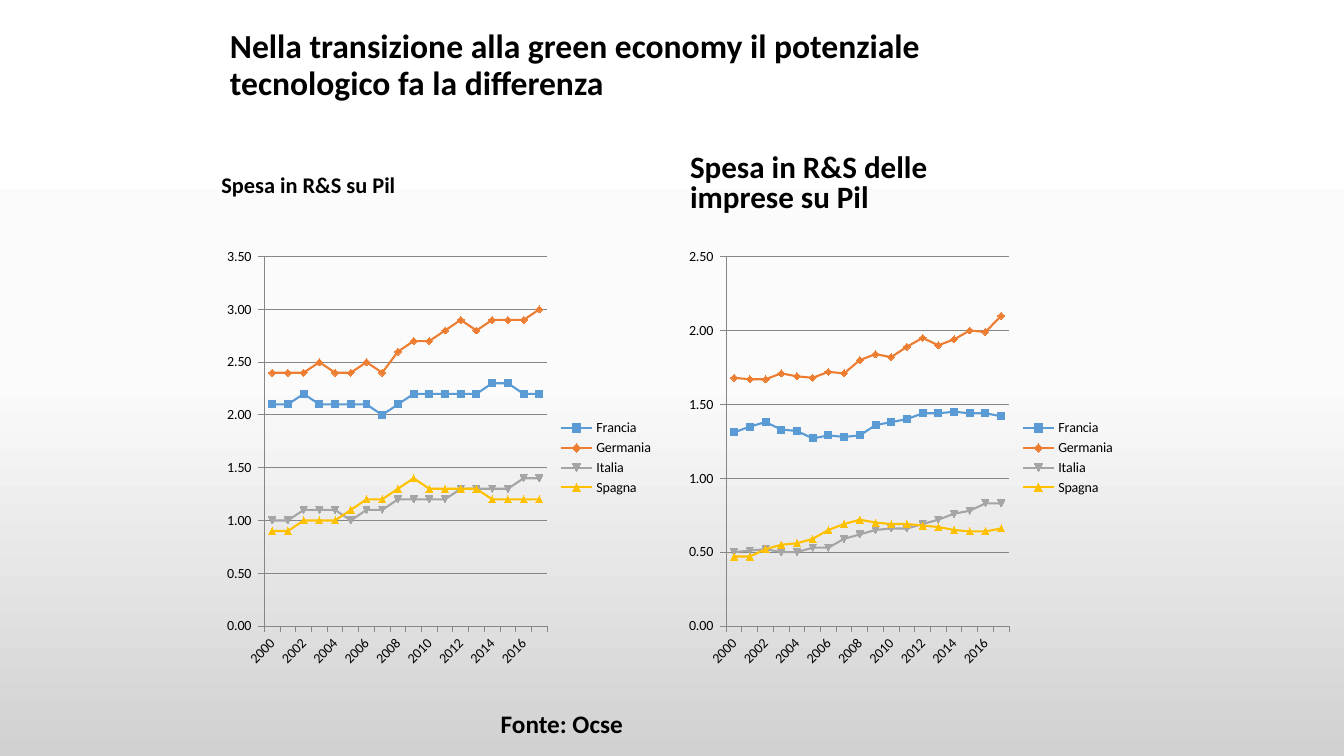
from copy import deepcopy

from pptx import Presentation
from pptx.chart.data import CategoryChartData
from pptx.dml.color import RGBColor
from pptx.enum.chart import XL_CHART_TYPE as CT, XL_LEGEND_POSITION as LP, XL_TICK_MARK as TM
from pptx.enum.text import MSO_ANCHOR as MA, PP_ALIGN as PA
from pptx.oxml import parse_xml
from pptx.oxml.ns import nsdecls
from pptx.util import Cm, Pt

FONT = "Calibri"
BLACK = RGBColor(0x00, 0x00, 0x00)
GREY = RGBColor(0x86, 0x86, 0x86)
BACKDROP = [(0, RGBColor(0xFF, 0xFF, 0xFF)), (0.5, RGBColor(0xFB, 0xFB, 0xFB)),
            (1, RGBColor(0xD1, 0xD1, 0xD1))]
COUNTRY_COLORS = {
    "Francia": RGBColor(0x5B, 0x9B, 0xD5),
    "Germania": RGBColor(0xED, 0x7D, 0x31),
    "Italia": RGBColor(0xA5, 0xA5, 0xA5),
    "Spagna": RGBColor(0xFF, 0xC0, 0x00),
}
YEARS = [str(year) for year in range(2000, 2018)]
TOTAL_SPENDING = {
    "Francia": [2.1, 2.1, 2.2, 2.1, 2.1, 2.1, 2.1, 2, 2.1,
                2.2, 2.2, 2.2, 2.2, 2.2, 2.3, 2.3, 2.2, 2.2],
    "Germania": [2.4, 2.4, 2.4, 2.5, 2.4, 2.4, 2.5, 2.4, 2.6,
                 2.7, 2.7, 2.8, 2.9, 2.8, 2.9, 2.9, 2.9, 3],
    "Italia": [1, 1, 1.1, 1.1, 1.1, 1, 1.1, 1.1, 1.2,
               1.2, 1.2, 1.2, 1.3, 1.3, 1.3, 1.3, 1.4, 1.4],
    "Spagna": [0.9, 0.9, 1, 1, 1, 1.1, 1.2, 1.2, 1.3,
               1.4, 1.3, 1.3, 1.3, 1.3, 1.2, 1.2, 1.2, 1.2],
}
BUSINESS_SPENDING = {
    "Francia": [1.31, 1.35, 1.38, 1.33, 1.32, 1.27, 1.29, 1.28, 1.29,
                1.36, 1.38, 1.4, 1.44, 1.44, 1.45, 1.44, 1.44, 1.42],
    "Germania": [1.68, 1.67, 1.67, 1.71, 1.69, 1.68, 1.72, 1.71, 1.8,
                 1.84, 1.82, 1.89, 1.95, 1.9, 1.94, 2, 1.99, 2.1],
    "Italia": [0.5, 0.51, 0.52, 0.5, 0.5, 0.53, 0.53, 0.59, 0.62,
               0.65, 0.66, 0.66, 0.69, 0.72, 0.76, 0.78, 0.83, 0.83],
    "Spagna": [0.47, 0.47, 0.52, 0.55, 0.56, 0.59, 0.65, 0.69, 0.72,
               0.7, 0.69, 0.69, 0.68, 0.67, 0.65, 0.64, 0.64, 0.66],
}


def write(sp, text, size, anchor=MA.TOP, spacing=1.0, bottom=0.13):
    """Fill a shape with one bold, left-aligned paragraph."""
    tf = sp.text_frame
    tf.word_wrap = True
    tf.vertical_anchor = anchor
    tf.margin_bottom = Cm(bottom)
    p = tf.paragraphs[0]
    p.alignment = PA.LEFT
    p.line_spacing = spacing
    r = p.add_run()
    r.text = text
    r.font.name, r.font.size, r.font.bold = FONT, Pt(size), True
    r.font.color.rgb = BLACK


def add_label(s, box, text, size, **kwargs):
    """Add a text box in the given box."""
    write(s.shapes.add_textbox(*map(Cm, box)), text, size, **kwargs)


def set_title(s, box, text):
    """Move the title placeholder to the box and fill it."""
    sp = s.shapes.title
    sp.left, sp.top, sp.width, sp.height = map(Cm, box)
    write(sp, text, 24, anchor=MA.MIDDLE, spacing=0.9)


def set_background(s):
    """Paint the top-to-bottom gradient."""
    fill = s.background.fill
    fill.gradient()
    fill.gradient_angle = 270
    stops = s.background._cSld.bg.bgPr.find(".//{*}gsLst")
    stops.insert(1, deepcopy(stops[0]))
    for stop, (position, color) in zip(fill.gradient_stops, BACKDROP):
        stop.position = position
        stop.color.rgb = color


def style_axis(axis):
    """Give an axis its grey line and outside ticks."""
    axis.format.line.color.rgb = GREY
    axis.format.line.width = Pt(0.75)
    axis.major_tick_mark = TM.OUTSIDE
    axis.minor_tick_mark = TM.NONE


def add_spending_chart(s, box, spending, top, step=0.5):
    """Add a line chart of spending by country in the given box."""
    data = CategoryChartData()
    data.categories = YEARS
    for country, values in spending.items():
        data.add_series(country, values)
    chart = s.shapes.add_chart(CT.LINE_MARKERS, *map(Cm, box), data).chart
    chart.has_title = False
    chart.font.name, chart.font.size = FONT, Pt(10)
    chart.font.color.rgb = BLACK
    chart.has_legend = True
    chart.legend.position = LP.RIGHT
    chart.legend.include_in_layout = False

    years, values = chart.category_axis, chart.value_axis
    style_axis(years)
    style_axis(values)
    years.tick_labels.font.size = Pt(10)
    years._element.txPr.bodyPr.set("rot", "-2700000")
    skip = parse_xml(f'<c:tickLblSkip {nsdecls("c")} val="2"/>')
    years._element.find("{*}noMultiLvlLbl").addprevious(skip)
    values.minimum_scale, values.maximum_scale, values.major_unit = 0, top, step
    values.tick_labels.number_format = r"#,##0.00_ ;\-#,##0.00\ "
    values.tick_labels.number_format_is_linked = False
    values.has_major_gridlines = True
    values.major_gridlines.format.line.color.rgb = GREY
    values.major_gridlines.format.line.width = Pt(0.75)

    chart.plots[0].vary_by_categories = False
    for series in chart.plots[0].series:
        color = COUNTRY_COLORS[series.name]
        series.smooth = False
        series.format.line.color.rgb = color
        series.format.line.width = Pt(1.5)
        series.marker.size = 5
        series.marker.format.fill.solid()
        series.marker.format.fill.fore_color.rgb = color
        series.marker.format.line.color.rgb = color


def build_slide(prs):
    """Build the slide comparing research spending."""
    s = prs.slides.add_slide(prs.slide_layouts[5])
    set_background(s)
    set_title(s, (5.54, 0, 20.6, 3.33),
              "Nella transizione alla green economy il potenziale tecnologico fa la differenza")
    add_label(s, (17.14, 3.73, 9.19, 1.8), "Spesa in R&S delle imprese su Pil", 22.2,
              anchor=MA.BOTTOM, spacing=0.8)
    add_label(s, (5.33, 3.53, 10.8, 2.51), "Spesa in R&S su Pil", 16,
              anchor=MA.BOTTOM, spacing=0.9, bottom=1.03)
    add_spending_chart(s, (5.5, 6.05, 11.23, 10.97), TOTAL_SPENDING, 3.5)
    add_spending_chart(s, (17.14, 6.05, 11.23, 10.97), BUSINESS_SPENDING, 2.5)
    add_label(s, (12.37, 17.73, 7.95, 1.02), "Fonte: Ocse", 18)


def main():
    """Create and save the presentation."""
    prs = Presentation()
    prs.slide_width, prs.slide_height = Cm(33.87), Cm(19.05)
    build_slide(prs)
    prs.save("out.pptx")


if __name__ == "__main__":
    main()
